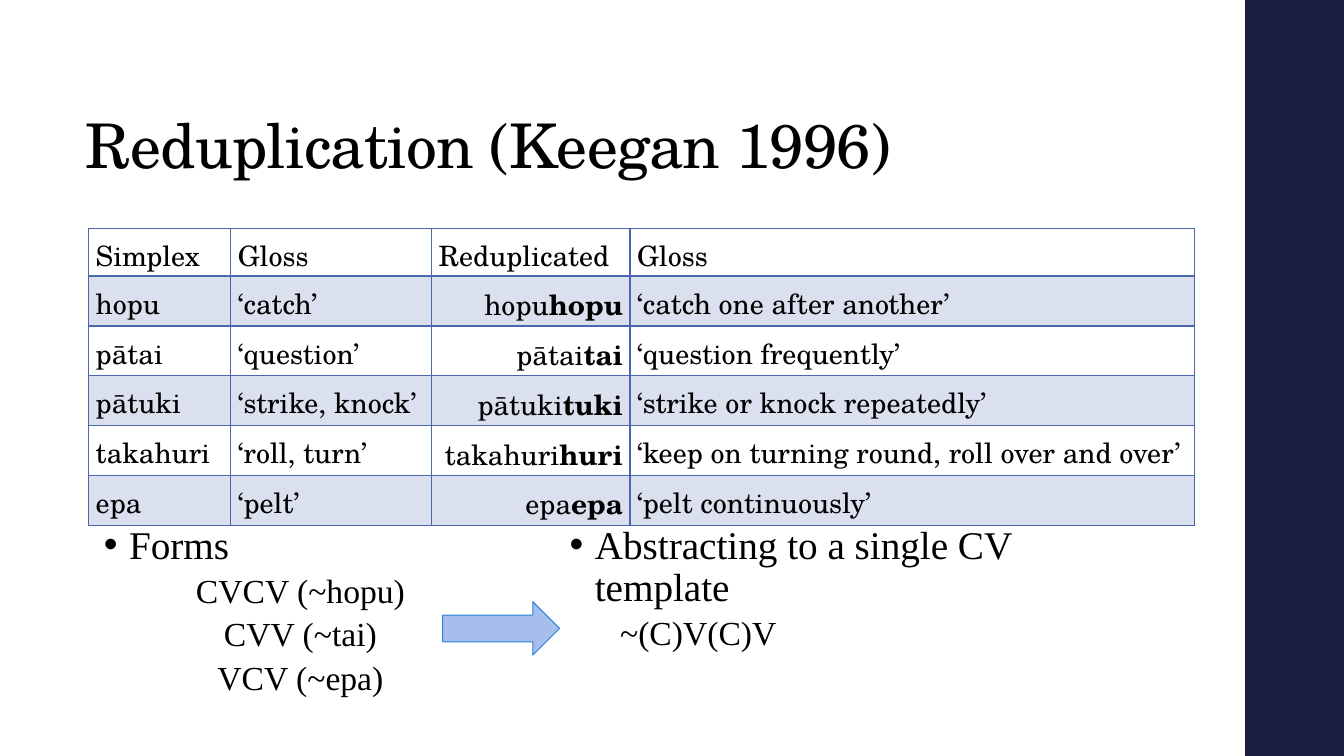
from lxml import etree
from pptx import Presentation
from pptx.dml.color import RGBColor
from pptx.enum.shapes import MSO_SHAPE
from pptx.enum.text import MSO_ANCHOR, MSO_AUTO_SIZE, PP_ALIGN
from pptx.oxml.ns import qn
from pptx.util import Inches, Pt

LEFT, CENTER, RIGHT = PP_ALIGN.LEFT, PP_ALIGN.CENTER, PP_ALIGN.RIGHT
RECTANGLE, RIGHT_ARROW = MSO_SHAPE.RECTANGLE, MSO_SHAPE.RIGHT_ARROW
BOTTOM, TOP, NO_AUTOFIT = MSO_ANCHOR.BOTTOM, MSO_ANCHOR.TOP, MSO_AUTO_SIZE.NONE

BLACK = RGBColor(0x00, 0x00, 0x00)
NAVY = RGBColor(0x1B, 0x1E, 0x3E)
TABLE_BLUE = RGBColor(0x4A, 0x66, 0xAC)
ARROW_FILL = RGBColor(0xA7, 0xBE, 0xED)
ARROW_LINE = RGBColor(0x29, 0x7F, 0xD5)

SCHOLA, TIMES = "TeX Gyre Schola", "Times New Roman"
SLIDE_WIDTH, SLIDE_HEIGHT = 13.33, 7.5
SIDEBAR_LEFT = 12.35

COLUMN_WIDTHS = [1.41, 1.99, 1.97, 5.6]
HEADER_HEIGHT, ROW_HEIGHT = 0.47, 0.49
HEADINGS = ["Simplex", "Gloss", "Reduplicated", "Gloss"]
# simplex, gloss, copied part, gloss of the reduplicated form
WORDS = [
    ("hopu", "‘catch’", "hopu", "‘catch one after another’"),
    ("pātai", "‘question’", "tai", "‘question frequently’"),
    ("pātuki", "‘strike, knock’", "tuki", "‘strike or knock repeatedly’"),
    ("takahuri", "‘roll, turn’", "huri", "‘keep on turning round, roll over and over’"),
    ("epa", "‘pelt’", "epa", "‘pelt continuously’"),
]


def add_text(paragraph, text, size, font, bold=False, align=LEFT, line_spacing=0.9,
             space_before=0, character_spacing=None):
    paragraph.alignment = align
    paragraph.line_spacing = line_spacing
    paragraph.space_before = Pt(space_before)
    run = paragraph.add_run()
    run.text = text
    run.font.size = Pt(size)
    run.font.name = font
    run.font.bold = bold
    run.font.color.rgb = BLACK
    if character_spacing is not None:
        run.font._element.set("spc", str(int(character_spacing * 100)))


def place(shape, box):
    shape.left, shape.top, shape.width, shape.height = map(Inches, box)


def add_filled_shape(slide, kind, box, fill, line=None):
    shape = slide.shapes.add_shape(kind, *map(Inches, box))
    shape.shadow.inherit = False
    shape.fill.solid()
    shape.fill.fore_color.rgb = fill
    if line is None:
        shape.line.fill.background()
    else:
        shape.line.color.rgb = line
        shape.line.width = Pt(0.75)


def fill_title(title, box):
    place(title, box)
    title.text_frame.auto_size = NO_AUTOFIT
    title.text_frame.vertical_anchor = BOTTOM
    add_text(title.text_frame.paragraphs[0], "Reduplication (Keegan 1996)", 44, SCHOLA,
             character_spacing=-0.5)


def format_cell(cell, shaded, bottom_width):
    cell.margin_left = cell.margin_right = Inches(0.07)
    cell.margin_top = cell.margin_bottom = 0
    properties = cell._tc.get_or_add_tcPr()
    for side, width in (("L", 1), ("R", 1), ("T", 1), ("B", bottom_width)):
        border = etree.SubElement(properties, qn(f"a:ln{side}"), w=str(Pt(width)))
        solid = etree.SubElement(border, qn("a:solidFill"))
        etree.SubElement(solid, qn("a:srgbClr"), val=str(TABLE_BLUE))
    if shaded:
        cell.fill.solid()
        cell.fill.fore_color.rgb = TABLE_BLUE
        color = properties.find(qn("a:solidFill")).find(qn("a:srgbClr"))
        etree.SubElement(color, qn("a:alpha"), val="20000")
    else:
        cell.fill.background()


def add_word_table(slide, left, top):
    height = HEADER_HEIGHT + ROW_HEIGHT * len(WORDS)
    table = slide.shapes.add_table(len(WORDS) + 1, len(COLUMN_WIDTHS), Inches(left), Inches(top),
                                   Inches(sum(COLUMN_WIDTHS)), Inches(height)).table
    table.first_row = table.horz_banding = False
    for column, width in zip(table.columns, COLUMN_WIDTHS):
        column.width = Inches(width)
    rows = [[[heading] for heading in HEADINGS]]
    rows += [[[base], [gloss], [base, copied], [new_gloss]]
             for base, gloss, copied, new_gloss in WORDS]
    for row_index, row in enumerate(rows):
        table.rows[row_index].height = Inches(ROW_HEIGHT if row_index else HEADER_HEIGHT)
        for column_index, parts in enumerate(row):
            cell = table.cell(row_index, column_index)
            format_cell(cell, shaded=row_index % 2 == 1, bottom_width=1 if row_index else 2)
            for part_index, part in enumerate(parts):
                add_text(cell.text_frame.paragraphs[0], part, 20, SCHOLA, bold=part_index == 1,
                         align=RIGHT if len(parts) == 2 else LEFT, line_spacing=1.15)


def set_indent(paragraph, margin, indent, bullet=None):
    properties = paragraph._p.get_or_add_pPr()
    properties.set("marL", str(Inches(margin)))
    properties.set("indent", str(Inches(indent)))
    if bullet:
        etree.SubElement(properties, qn("a:buFont"), typeface="Arial")
        etree.SubElement(properties, qn("a:buChar"), char=bullet)
    else:
        etree.SubElement(properties, qn("a:buNone"))


def fill_list(body, box, heading, items, item_align):
    place(body, box)
    frame = body.text_frame
    frame.auto_size = NO_AUTOFIT
    frame.vertical_anchor = TOP
    frame.word_wrap = True
    add_text(frame.paragraphs[0], heading, 28, TIMES, space_before=10)
    set_indent(frame.paragraphs[0], 0.25, -0.25, bullet="•")
    for item in items:
        paragraph = frame.add_paragraph()
        paragraph.level = 1
        add_text(paragraph, item, 24, TIMES, align=item_align, space_before=5)
        set_indent(paragraph, 0.5, 0)


def main():
    presentation = Presentation()
    presentation.slide_width = Inches(SLIDE_WIDTH)
    presentation.slide_height = Inches(SLIDE_HEIGHT)
    slide = presentation.slides.add_slide(presentation.slide_layouts.get_by_name("Two Content"))
    title, forms, template = slide.placeholders

    add_filled_shape(slide, RECTANGLE,
                     (SIDEBAR_LEFT, 0, SLIDE_WIDTH - SIDEBAR_LEFT, SLIDE_HEIGHT), NAVY)
    fill_title(title, (0.75, 0.4, 11.23, 1.45))
    add_word_table(slide, 0.88, 2.27)
    fill_list(forms, (0.93, 5.16, 3.6, 1.95), "Forms",
              ["CVCV (~hopu)", "CVV (~tai)", "VCV (~epa)"], CENTER)
    fill_list(template, (5.55, 5.16, 5.42, 1.94), "Abstracting to a single CV template",
              ["~(C)V(C)V"], LEFT)
    add_filled_shape(slide, RIGHT_ARROW, (4.39, 5.97, 1.16, 0.53), ARROW_FILL, ARROW_LINE)
    presentation.save("out.pptx")


if __name__ == "__main__":
    main()
